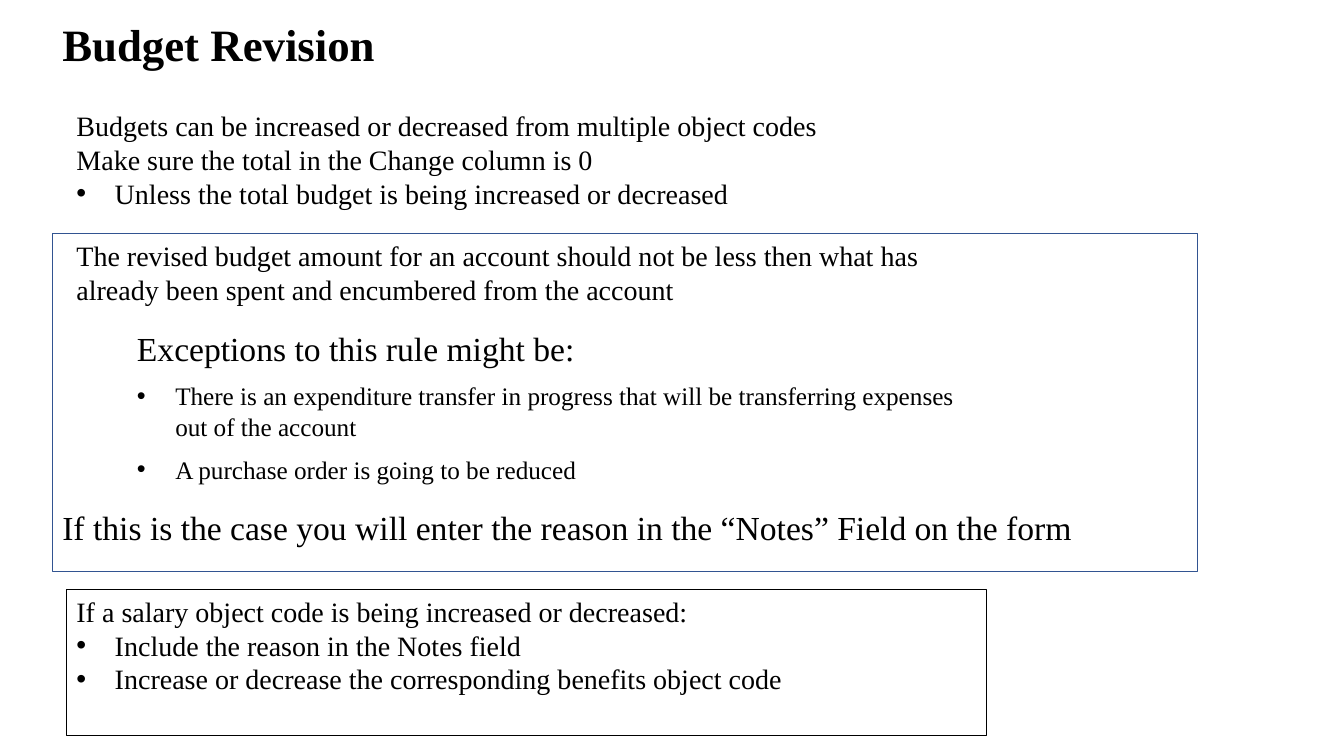
"""Build the Budget Revision slide."""
from dataclasses import dataclass

from lxml.etree import SubElement
from pptx import Presentation
from pptx.dml.color import RGBColor
from pptx.enum.shapes import MSO_SHAPE
from pptx.enum.text import MSO_ANCHOR, PP_ALIGN
from pptx.oxml.ns import qn
from pptx.util import Inches, Pt


@dataclass(frozen=True)
class Theme:
    font: str = "Times New Roman"
    ink: str = "000000"
    blue: str = "325491"
    title: int = 32
    lead: int = 24
    body: int = 20
    small: int = 18
    indent: float = 0.38


THEME = Theme()
SIZE = Inches(13.33), Inches(7.5)

# Columns and rows are (start, span) in percent of the slide.
COLS = {
    "title": (3.9, 50.64),
    "wide": (3.9, 85.2),
    "main": (4.95, 68.42),
    "nested": (9.45, 63.9),
}
ROWS = {
    "title": (0.13, 16.93),
    "intro": (13.73, 14.8),
    "frame": (30.93, 44.67),
    "rule": (30.93, 10.27),
    "cases": (42.67, 22.4),
    "notes": (66.4, 6.67),
    "salary": (78, 19.33),
}

# Each block: column, row, border (colour, width), space between, lines (text, size, bullet).
BLOCKS = [
    ("main", "rule", None, 0, [
        ("The revised budget amount for an account should not be less then what has "
         "already been spent and encumbered from the account", THEME.body, False),
    ]),
    ("nested", "cases", None, 9.2, [
        ("Exceptions to this rule might be:", THEME.lead, False),
        ("There is an expenditure transfer in progress that will be transferring "
         "expenses out of the account", THEME.small, True),
        ("A purchase order is going to be reduced", THEME.small, True),
    ]),
    ("wide", "notes", None, 0, [
        ("If this is the case you will enter the reason in the “Notes” Field on the form",
         THEME.lead, False),
    ]),
    ("title", "title", None, 0, [("Budget Revision", THEME.title, False)]),
    ("main", "intro", None, 0, [
        ("Budgets can be increased or decreased from multiple object codes",
         THEME.body, False),
        ("Make sure the total in the Change column is 0", THEME.body, False),
        ("Unless the total budget is being increased or decreased", THEME.body, True),
    ]),
    ("wide", "frame", (THEME.blue, 1), 0, []),
    ("main", "salary", (THEME.ink, 0.75), 0, [
        ("If a salary object code is being increased or decreased:", THEME.body, False),
        ("Include the reason in the Notes field", THEME.body, True),
        ("Increase or decrease the corresponding benefits object code",
         THEME.body, True),
    ]),
]


def place(col, row):
    """Return left, top, width and height of a grid cell."""
    left, width = (int(SIZE[0] * part / 100) for part in COLS[col])
    top, height = (int(SIZE[1] * part / 100) for part in ROWS[row])
    return left, top, width, height


def add_bullet(para):
    """Give a paragraph a hanging bullet."""
    props = para._p.get_or_add_pPr()
    props.set("marL", str(Inches(THEME.indent)))
    props.set("indent", str(-Inches(THEME.indent)))
    SubElement(props, qn("a:buFont"), typeface="Arial")
    SubElement(props, qn("a:buChar"), char="•")


def write(frame, lines, gap):
    """Fill a text frame and style its paragraphs."""
    frame.word_wrap = True
    frame.vertical_anchor = MSO_ANCHOR.TOP
    frame.text = "\n".join(text for text, _, _ in lines)
    for index, (para, (_, size, bullet)) in enumerate(zip(frame.paragraphs, lines)):
        para.alignment = PP_ALIGN.LEFT
        if index and gap:
            para.space_before = Pt(gap)
        if size == THEME.title:
            para.line_spacing = 1.2
            para.space_before, para.space_after = Pt(10), Pt(6)
        if bullet:
            add_bullet(para)
        for run in para.runs:
            run.font.name = THEME.font
            run.font.size = Pt(size)
            run.font.bold = size == THEME.title
            run.font.color.rgb = RGBColor.from_string(THEME.ink)


def add_block(slide, col, row, border, gap, lines):
    """Add one text box or bordered rectangle."""
    if border:
        color, width = border
        shape = slide.shapes.add_shape(MSO_SHAPE.RECTANGLE, *place(col, row))
        shape.shadow.inherit = False
        shape.fill.background()
        shape.line.color.rgb = RGBColor.from_string(color)
        shape.line.width = Pt(width)
    else:
        shape = slide.shapes.add_textbox(*place(col, row))
    if lines:
        write(shape.text_frame, lines, gap)


def main():
    """Build and save the deck."""
    deck = Presentation()
    deck.slide_width, deck.slide_height = SIZE
    slide = deck.slides.add_slide(deck.slide_layouts[6])
    for block in BLOCKS:
        add_block(slide, *block)
    deck.save("out.pptx")


if __name__ == "__main__":
    main()
